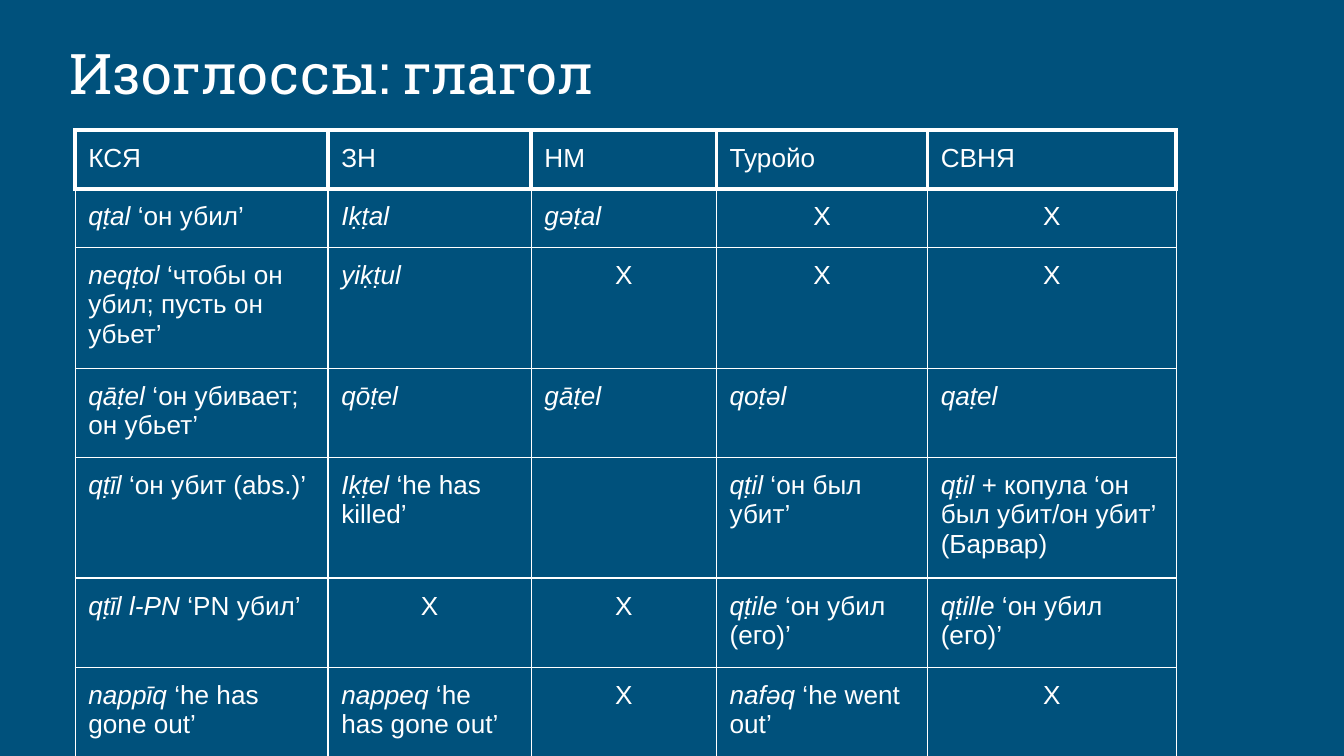
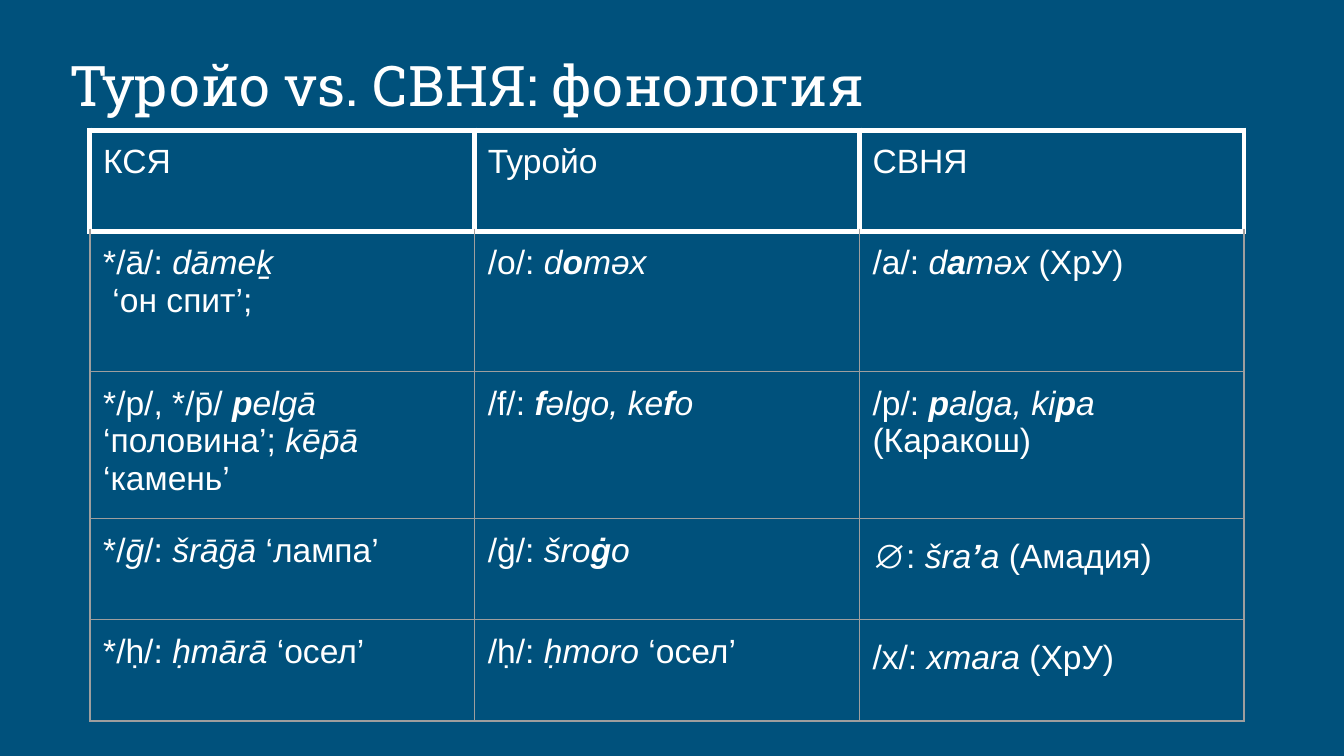
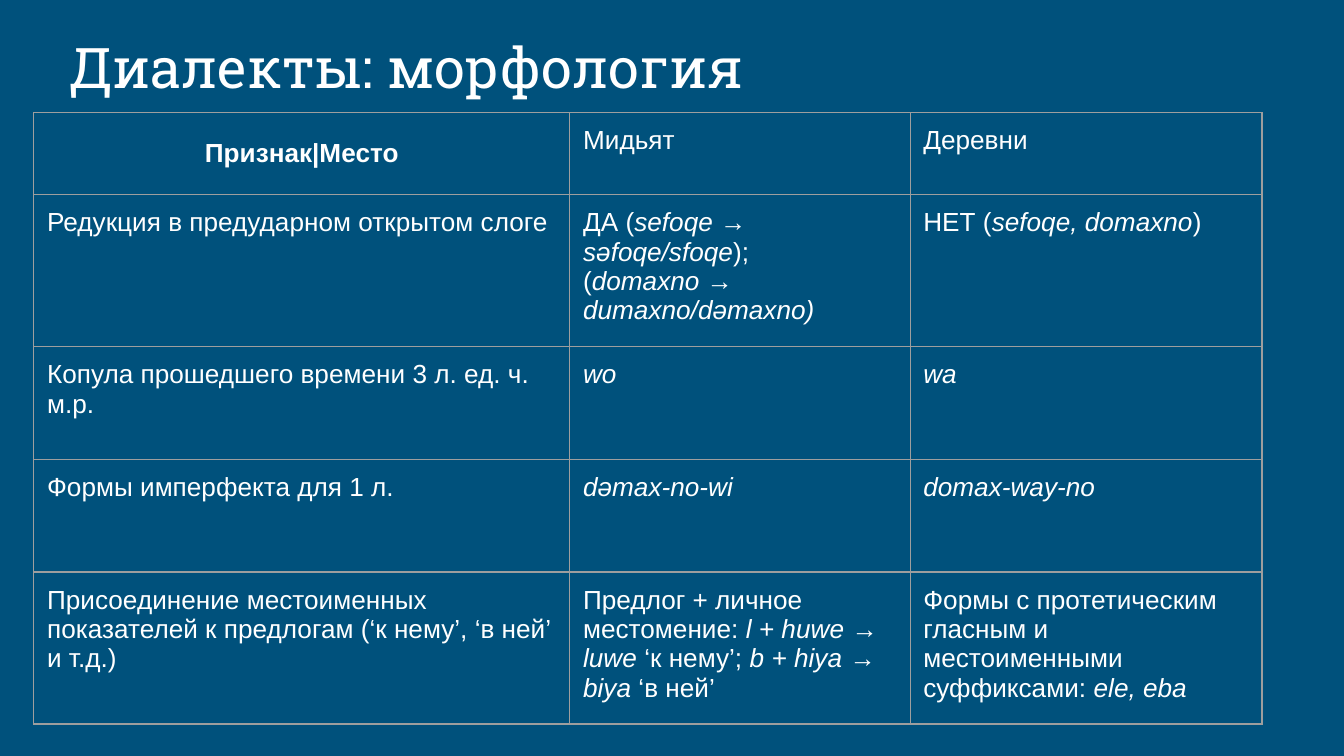
from lxml import etree
from pptx import Presentation
from pptx.dml.color import RGBColor
from pptx.enum import text
from pptx.oxml import ns
from pptx.util import Cm, Pt

COLORS = {"background": "00517C", "text": "FFFFFF", "strong": "FFFFFF", "grey": "9E9E9E"}
TITLE_FONT, BODY_FONT = "Roboto Slab", "Arial"
INSET = Cm(0.25)
CORNER_TITLE = "^Признак|Место^"

# In cell texts, _ switches italics on and off and ^ does the same for bold.
SLIDES = [
    {
        "title": "Изоглоссы: глагол", "title_top": 0.33,
        "left": 1.42, "top": 2.46, "size": 14,
        "columns": [4.78, 3.84, 3.5, 3.99, 4.7],
        "rows": [1.11, 1.11, 1.07, 1.07, 1.11, 1.07, 1.07],
        "line": ("text", 0.75), "header_line": ("strong", 2.25), "loose": [],
        "cells": [
            ["КСЯ", "ЗН", "НМ", "Туройо", "СВНЯ"],
            ["_qṭal _‘он убил’", "_Iḳṭal_", "_gəṭal_", "X", "X"],
            ["_neqṭol _‘чтобы он убил; пусть он убьет’", "_yiḳṭul_", "X", "X", "X"],
            ["_qāṭel _‘он убивает; он убьет’", "_qōṭel_", "_gāṭel_", "_qoṭəl_", "_qaṭel_"],
            ["_qṭīl _‘он убит (abs.)’", "_Iḳṭel _‘he has killed’", "",
             "_qṭil _‘он был убит’", "_qṭil + _копула ‘он был убит/он убит’ (Барвар)"],
            ["_qṭīl l-PN_ ‘PN убил’", "X", "X",
             "_qṭile_ ‘он убил (его)’", "_qṭille _‘он убил (его)’"],
            ["_nappīq _‘he has gone out’", "_nappeq_ ‘he has gone out’", "X",
             "_nafəq_ ‘he went out’", "X"],
        ],
    },
    {
        "title": "Туройо vs. СВНЯ: фонология", "title_top": 0.56,
        "left": 1.7, "top": 2.46, "size": 18,
        "columns": [7.27] * 3,
        "rows": [1.91, 2.65, 2.65, 1.91, 1.91],
        "line": ("grey", 0.75), "header_line": ("strong", 3), "loose": [(3, 2), (4, 2)],
        "cells": [
            ["КСЯ", "Туройо", "СВНЯ"],
            ["*/ā/: _dāmeḵ_\n ‘он спит’;", "/o/: _d^o^məx_", "/a/: _d^a^məx_ (ХрУ)"],
            ["*/p/, */p̄/ _^p^elgā_ ‘половина’; _kēp̄ā _‘камень’",
             "/f/: _^f^əlgo, ke^f^o_", "/p/: _^p^alga, ki^p^a _(Каракош)"],
            ["*/_ḡ_/: _šrāḡā _‘лампа’", "/ġ/: _šro^ġ^o_", "∅: _šra^’^a _(Амадия)"],
            ["*/ḥ/: _ḥmārā _‘осел’", "/ḥ/: _ḥmoro_ ‘осел’", "/x/: _xmara _(ХрУ)"],
        ],
    },
    {
        "title": "Диалекты: морфология", "title_top": 0.23,
        "left": 0.64, "top": 2.13, "size": 14,
        "columns": [10.13, 6.43, 6.65],
        "rows": [1.55, 2.13, 2.13, 2.13, 2.06],
        "line": ("grey", 0.75), "header_line": ("grey", 0.75), "loose": [],
        "cells": [
            [CORNER_TITLE, "Мидьят", "Деревни"],
            ["Редукция в предударном открытом слоге",
             "ДА (_sefoqe → səfoqe/sfoqe_);\n(_domaxno → dumaxno/dəmaxno)_",
             "НЕТ (_sefoqe, domaxno_)"],
            ["Копула прошедшего времени 3 л. ед. ч. м.р.", "_wo_", "_wa_"],
            ["Формы имперфекта для 1 л.", "_dəmax-no-wi_", "_domax-way-no_"],
            ["Присоединение местоименных показателей к предлогам (‘к нему’, ‘в ней’ и т.д.)",
             "Предлог + личное местомение: _l + huwe _→ _luwe_ ‘к нему’; _b + hiya _→ _biya _‘в ней’",
             "Формы с протетическим гласным и местоименными суффиксами: _ele, eba_"],
        ],
    },
]


def write_marked(paragraph, marked, font_name, size):
    """Add runs for a text whose _ and ^ marks toggle italics and bold."""
    for i, slanted in enumerate(marked.split("_")):
        for j, piece in enumerate(slanted.split("^")):
            if piece:
                run = paragraph.add_run()
                run.text = piece
                run.font.name = font_name
                run.font.size = Pt(size)
                run.font.italic = i % 2 == 1
                run.font.bold = j % 2 == 1
                run.font.color.rgb = RGBColor.from_string(COLORS["text"])


def set_borders(cell, sides):
    """Draw the cell's borders from a dict of side letter to (colour, points)."""
    properties = cell._tc.get_or_add_tcPr()
    for position, side in enumerate("LRTB"):
        color, width = sides[side]
        line = etree.Element(ns.qn(f"a:ln{side}"), w=str(Pt(width)))
        fill = etree.SubElement(line, ns.qn("a:solidFill"))
        etree.SubElement(fill, ns.qn("a:srgbClr"), val=COLORS[color])
        properties.insert(position, line)


presentation = Presentation()
presentation.slide_width = Cm(25.4)
presentation.slide_height = Cm(14.29)

for content in SLIDES:
    slide = presentation.slides.add_slide(presentation.slide_layouts[6])
    slide.background.fill.solid()
    slide.background.fill.fore_color.rgb = RGBColor.from_string(COLORS["background"])

    title = slide.shapes.add_textbox(Cm(1.07), Cm(content["title_top"]), Cm(23.24), Cm(1.91))
    frame = title.text_frame
    frame.word_wrap = True
    frame.vertical_anchor = text.MSO_ANCHOR.BOTTOM
    frame.margin_left = frame.margin_right = frame.margin_top = frame.margin_bottom = INSET
    write_marked(frame.paragraphs[0], content["title"], TITLE_FONT, 30)

    columns, rows = content["columns"], content["rows"]
    table = slide.shapes.add_table(
        len(rows), len(columns), Cm(content["left"]), Cm(content["top"]),
        Cm(sum(columns)), Cm(sum(rows))).table
    table.first_row = table.horz_banding = False
    for column, width in zip(table.columns, columns):
        column.width = Cm(width)
    for row, height in zip(table.rows, rows):
        row.height = Cm(height)

    for r, row_texts in enumerate(content["cells"]):
        line = content["line"] if r else content["header_line"]
        top_line = content["header_line"] if r < 2 else line
        for c, marked in enumerate(row_texts):
            cell = table.cell(r, c)
            cell.fill.background()
            cell.margin_left = cell.margin_right = cell.margin_top = cell.margin_bottom = INSET
            set_borders(cell, {"L": line, "R": line, "T": top_line, "B": line})
            if marked == CORNER_TITLE:
                cell.vertical_anchor = text.MSO_ANCHOR.MIDDLE
            for k, part in enumerate(marked.split("\n")):
                frame = cell.text_frame
                paragraph = frame.add_paragraph() if k else frame.paragraphs[0]
                if marked in ("X", CORNER_TITLE):
                    paragraph.alignment = text.PP_ALIGN.CENTER
                if (r, c) in content["loose"]:
                    paragraph.line_spacing = 1.15
                    paragraph.space_after = Pt(16)
                write_marked(paragraph, part, BODY_FONT, content["size"])

presentation.save("out.pptx")
